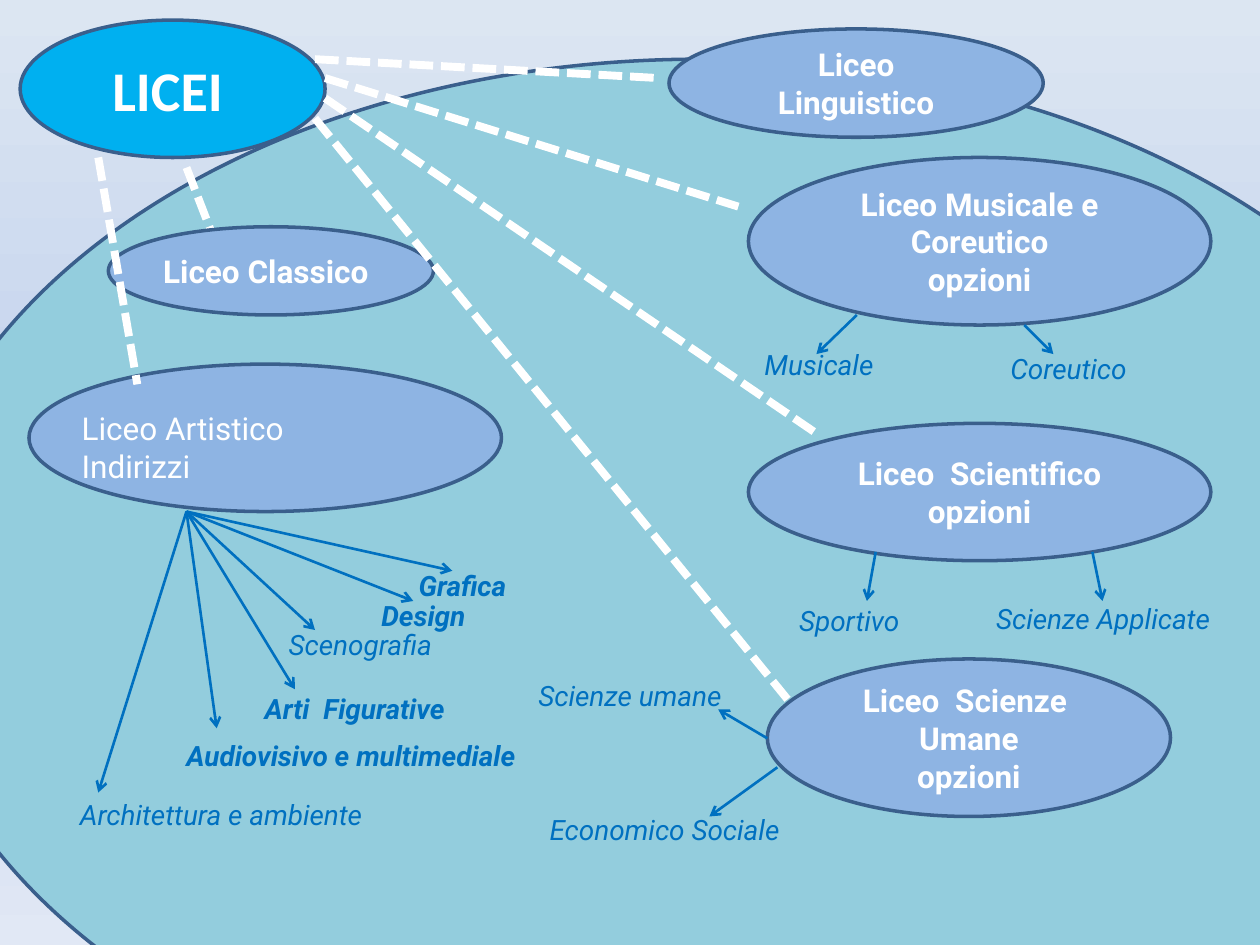
from lxml import etree
from pptx import Presentation
from pptx.dml.color import RGBColor
from pptx.enum.dml import MSO_LINE
from pptx.enum.shapes import MSO_CONNECTOR, MSO_SHAPE
from pptx.enum.text import MSO_ANCHOR, PP_ALIGN
from pptx.oxml.ns import qn
from pptx.util import Inches, Pt

WHITE, BLUE, OUTLINE = "FFFFFF", "0070C0", "3A5F8C"
SKY, TEAL, PERIWINKLE = "00B0F0", "93CDDD", "8EB4E3"


def color(hex_value):
    return RGBColor.from_string(hex_value)


def paint_background(slide):
    fill = slide.background.fill
    fill.gradient()
    fill.gradient_angle = 270
    first, last = fill.gradient_stops
    first.color.rgb, first.position = color("DCE6F2"), 0
    last.color.rgb, last.position = color("E1E8F5"), 1
    # Middle stop between the two default ones
    stops = slide.background._cSld.find(".//" + qn("a:gsLst"))
    middle = etree.Element(qn("a:gs"), pos="50000")
    etree.SubElement(middle, qn("a:srgbClr"), val="C2D1ED")
    stops.insert(1, middle)


def write(frame, lines, size, hue, font="Roboto", bold=False, italic=False,
          align=PP_ALIGN.CENTER, anchor=MSO_ANCHOR.MIDDLE):
    frame.word_wrap = True
    frame.vertical_anchor = anchor
    frame.text = "\n".join(lines)
    for paragraph in frame.paragraphs:
        paragraph.alignment = align
        paragraph.font.name = font
        paragraph.font.size = Pt(size)
        paragraph.font.bold = bold
        paragraph.font.italic = italic
        paragraph.font.color.rgb = color(hue)


def add_text(slide, box, lines, size, hue, **style):
    text = slide.shapes.add_textbox(*map(Inches, box))
    write(text.text_frame, lines, size, hue, **style)


def add_ellipse(slide, box, hue, lines=()):
    ellipse = slide.shapes.add_shape(MSO_SHAPE.OVAL, *map(Inches, box))
    ellipse.shadow.inherit = False
    ellipse.fill.solid()
    ellipse.fill.fore_color.rgb = color(hue)
    ellipse.line.color.rgb = color(OUTLINE)
    ellipse.line.width = Pt(2)
    if lines:
        write(ellipse.text_frame, lines, 18, WHITE, bold=True)


def add_line(slide, start, end, hue, width):
    line = slide.shapes.add_connector(
        MSO_CONNECTOR.STRAIGHT, *map(Inches, (*start, *end)))
    line.line.color.rgb = color(hue)
    line.line.width = Pt(width)
    etree.SubElement(line._element.spPr, qn("a:effectLst"))
    return line.line


def add_ray(slide, start, end):
    add_line(slide, start, end, WHITE, 4.5).dash_style = MSO_LINE.SQUARE_DOT


def add_arrow(slide, start, end):
    arrow = add_line(slide, start, end, BLUE, 1.5)
    etree.SubElement(arrow._get_or_add_ln(), qn("a:tailEnd"), type="arrow")


def add_options(slide, options):
    """Each option: label, its box, bold, arrow start and arrow end."""
    for label, box, bold, start, end in options:
        add_arrow(slide, start, end)
        add_text(slide, box, [label], 16, BLUE, bold=bold, italic=True)


def add_licei(slide, box):
    left, top, width, height = box
    add_ellipse(slide, box, SKY)
    add_text(slide, (left + 0.23, top + 0.23, width - 0.54, height - 0.45),
             ["LICEI"], 32, WHITE, font="Calibri", bold=True)


def add_classico(slide, box):
    left, top, width, _ = box
    add_ray(slide, (1.48, 1.33), (1.72, 1.95))
    add_ellipse(slide, box, PERIWINKLE)
    add_text(slide, (left + 0.08, top + 0.15, width - 0.24, 0.4),
             ["Liceo Classico"], 18, WHITE, bold=True, anchor=MSO_ANCHOR.TOP)


def add_artistico(slide, box):
    left, top, width, height = box
    add_ellipse(slide, box, PERIWINKLE)
    add_text(slide, (left + 0.32, top + 0.31, width - 0.39, 0.71),
             ["Liceo Artistico", "Indirizzi"], 18, WHITE,
             align=PP_ALIGN.LEFT, anchor=MSO_ANCHOR.TOP)
    # All the branches leave from one point on the lower edge
    hub = (left + 1.25, top + height)
    branches = [
        ("Grafica", (2.73, 4.53, 1.88, 0.23), True, (3.59, 4.53)),
        ("Design", (2.42, 4.77, 1.88, 0.23), True, (3.28, 4.77)),
        ("Scenografia", (1.92, 5, 1.88, 0.23), False, (2.5, 5)),
        ("Arti  Figurative", (1.41, 5.39, 2.81, 0.47), True, (2.34, 5.47)),
        ("Audiovisivo e multimediale", (0.91, 5.72, 3.75, 0.55), True,
         (1.72, 5.78)),
        ("Architettura e ambiente", (0.23, 6.27, 3.05, 0.39), False,
         (0.78, 6.29)),
    ]
    add_options(slide, [(label, place, bold, hub, tip)
                        for label, place, bold, tip in branches])


def add_liceo(slide, box, lines, options=()):
    add_ellipse(slide, box, PERIWINKLE, lines)
    add_options(slide, options)


def main():
    presentation = Presentation()
    presentation.slide_width = Inches(10)
    presentation.slide_height = Inches(7.5)
    slide = presentation.slides.add_slide(presentation.slide_layouts[6])

    # Backdrop and title
    paint_background(slide)
    add_ellipse(slide, (-0.78, 0.47, 12.66, 8.52), TEAL)
    add_licei(slide, (0.16, 0.16, 2.42, 1.09))

    # Left side
    add_classico(slide, (0.86, 1.8, 2.58, 0.7))
    add_artistico(slide, (0.23, 2.89, 3.75, 1.17))

    # Right side
    add_liceo(slide, (5.31, 0.23, 2.97, 0.86), ["Liceo Linguistico"])
    add_liceo(slide, (5.94, 1.25, 3.67, 1.33),
              ["Liceo Musicale e Coreutico", "opzioni"], [
        ("Musicale", (5.56, 2.66, 1.88, 0.47), False,
         (6.8, 2.5), (6.48, 2.81)),
        ("Coreutico", (7.54, 2.81, 1.88, 0.23), False,
         (8.13, 2.58), (8.36, 2.81)),
    ])
    add_liceo(slide, (5.94, 3.36, 3.67, 1.09),
              ["Liceo  Scientifico", "opzioni"], [
        ("Sportivo", (5.8, 4.77, 1.88, 0.31), False,
         (6.95, 4.38), (6.88, 4.77)),
        ("Scienze Applicate", (7.66, 4.63, 2.19, 0.55), False,
         (8.67, 4.38), (8.75, 4.77)),
    ])

    # Rays from the title to the schools, over the ellipses they cross
    for start, end in [
        ((2.5, 0.47), (5.23, 0.62)),
        ((2.58, 0.62), (5.86, 1.64)),
        ((2.58, 0.78), (6.48, 3.44)),
        ((2.5, 0.94), (6.25, 5.55)),
        ((0.78, 1.25), (1.09, 3.05)),
    ]:
        add_ray(slide, start, end)

    # The last school covers the end of its ray
    add_liceo(slide, (6.09, 5.23, 3.2, 1.25),
              ["Liceo  Scienze  Umane", "opzioni"], [
        ("Scienze umane", (3.83, 5.17, 2.34, 0.7), False,
         (6.09, 5.86), (5.7, 5.63)),
        ("Economico Sociale", (3.75, 6.19, 3.05, 0.78), False,
         (6.17, 6.09), (5.63, 6.48)),
    ])

    presentation.save("out.pptx")


if __name__ == "__main__":
    main()
